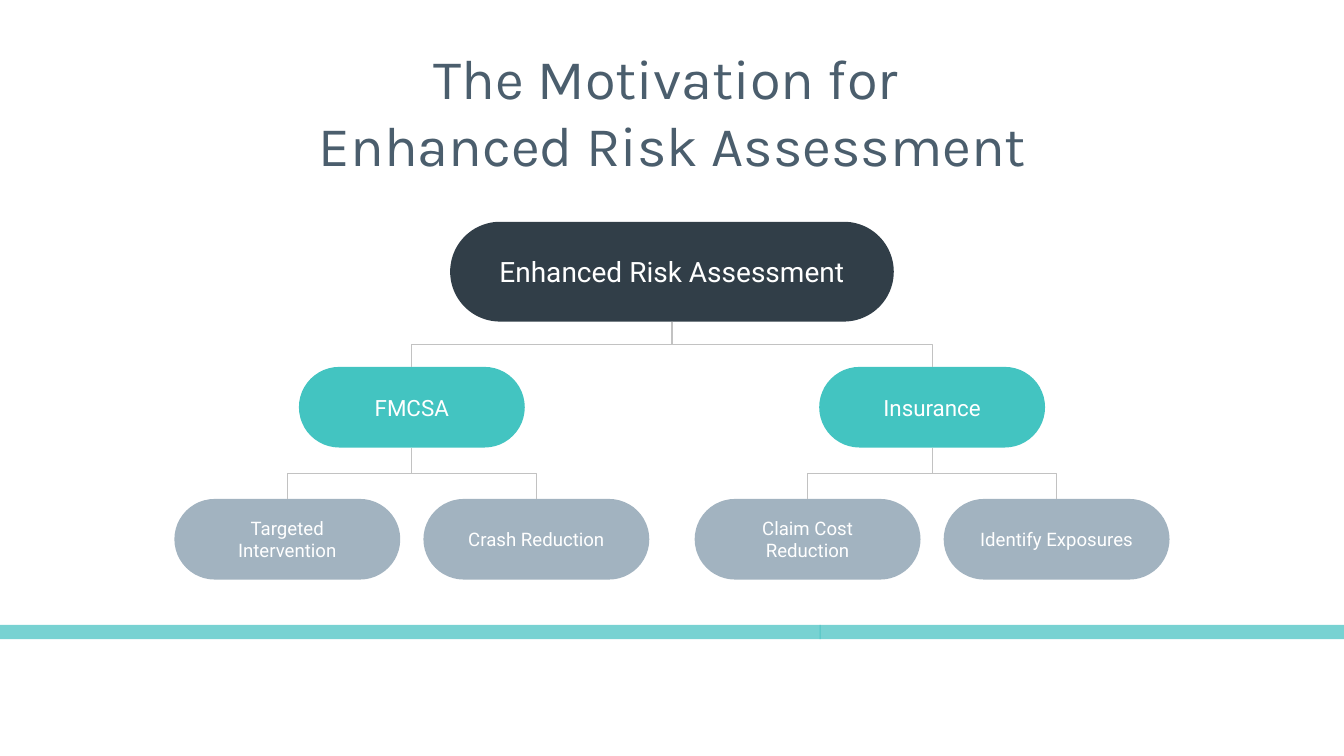
from pptx import Presentation
from pptx.dml.color import RGBColor
from pptx.enum.shapes import MSO_CONNECTOR, MSO_SHAPE
from pptx.enum.text import MSO_ANCHOR, MSO_AUTO_SIZE, PP_ALIGN
from pptx.oxml.ns import qn
from pptx.util import Inches, Pt
from lxml import etree

ELBOW = MSO_CONNECTOR.ELBOW
RECT, PILL = MSO_SHAPE.RECTANGLE, MSO_SHAPE.ROUNDED_RECTANGLE
TOP, MIDDLE = MSO_ANCHOR.TOP, MSO_ANCHOR.MIDDLE
CENTER = PP_ALIGN.CENTER
NO_AUTOFIT = MSO_AUTO_SIZE.NONE

SLIDE_W, SLIDE_H = 13.33, 7.5
DARK, TEAL, GREY = "313E48", "43C4C1", "A2B3C0"
BRANCHES = [
    ("FMCSA", ["Targeted Intervention", "Crash Reduction"]),
    ("Insurance", ["Claim Cost Reduction", "Identify Exposures"]),
]


def color(value):
    return RGBColor.from_string(value)


def add_block(s, kind, x, y, w, h, fill):
    block = s.shapes.add_shape(kind, Inches(x), Inches(y), Inches(w), Inches(h))
    block.shadow.inherit = False
    block.fill.solid()
    block.fill.fore_color.rgb = color(fill)
    block.line.fill.background()
    return block


def set_text(tf, text, font, size, text_color, anchor):
    tf.word_wrap = True
    tf.auto_size = NO_AUTOFIT
    tf.vertical_anchor = anchor
    tf.margin_left = tf.margin_right = Inches(0.13)
    tf.margin_top = tf.margin_bottom = Inches(0.13)
    tf.text = text
    p = tf.paragraphs[0]
    p.alignment = CENTER
    p.line_spacing = 1.0
    p.space_before = Pt(0)
    p.font.name = font
    p.font.size = Pt(size)
    p.font.color.rgb = color(text_color)


def add_title(s, x, y, w, h):
    title = s.shapes.title
    title.left, title.top = Inches(x), Inches(y)
    title.width, title.height = Inches(w), Inches(h)
    set_text(title.text_frame, "The Motivation for \vEnhanced Risk Assessment",
             "Karla", 40, "4B5E6D", TOP)


def add_footer_bar(s, x, y, w, h, split):
    # Two translucent strips that overlap slightly at the split
    for left, width in ((x, split + 0.01), (x + split, w - split)):
        strip = add_block(s, RECT, left, y, width, h, "40C0C0")
        fill = strip.fill.fore_color._xFill.find(qn("a:srgbClr"))
        etree.SubElement(fill, qn("a:alpha"), val="70000")


def add_node(s, text, center, y, w, h, fill, size):
    node = add_block(s, PILL, center - w / 2, y, w, h, fill)
    node.adjustments[0] = 0.5
    set_text(node.text_frame, text, "Roboto", size, "FFFFFF", MIDDLE)
    return node


def join(s, parent, child):
    x1, y1 = parent.left + parent.width // 2, parent.top + parent.height
    x2, y2 = child.left + child.width // 2, child.top
    c = s.shapes.add_connector(ELBOW, x1, y1, x2, y2)
    c.begin_connect(parent, 2)
    c.end_connect(child, 0)
    # Turn the elbow so that it leaves and arrives vertically
    c.width, c.height = y2 - y1, abs(x2 - x1)
    c.left = (x1 + x2 - c.width) // 2
    c.top = (y1 + y2 - c.height) // 2
    xfrm = c._element.spPr.find(qn("a:xfrm"))
    xfrm.flipH = x2 > x1
    xfrm.rot = 270 if x2 > x1 else 90
    c.line.color.rgb = color("C2C2C2")
    c.line.width = Pt(0.75)
    etree.SubElement(c._element.spPr, qn("a:effectLst"))


def add_tree(s, x, y, w):
    middle = x + w / 2
    root = add_node(s, "Enhanced Risk Assessment", middle, y, 4.4, 0.99, DARK, 20)
    for side, (name, leaves) in zip((-1, 1), BRANCHES):
        center = middle + side * 2.58
        branch = add_node(s, name, center, y + 1.44, 2.24, 0.8, TEAL, 16)
        join(s, root, branch)
        for leaf_side, text in zip((-1, 1), leaves):
            leaf = add_node(s, text, center + leaf_side * 1.235, y + 2.75,
                            2.24, 0.8, GREY, 13.3)
            join(s, branch, leaf)


def main():
    prs = Presentation()
    prs.slide_width, prs.slide_height = Inches(SLIDE_W), Inches(SLIDE_H)
    s = prs.slides.add_slide(prs.slide_layouts[5])
    s.background.fill.solid()
    s.background.fill.fore_color.rgb = color("FFFFFF")
    add_footer_bar(s, 0, 6.2, SLIDE_W, 0.14, 8.13)
    add_title(s, 0.67, 0.3, 12, 1.25)
    add_tree(s, 1.73, 2.2, 9.87)
    prs.save("out.pptx")


if __name__ == "__main__":
    main()
